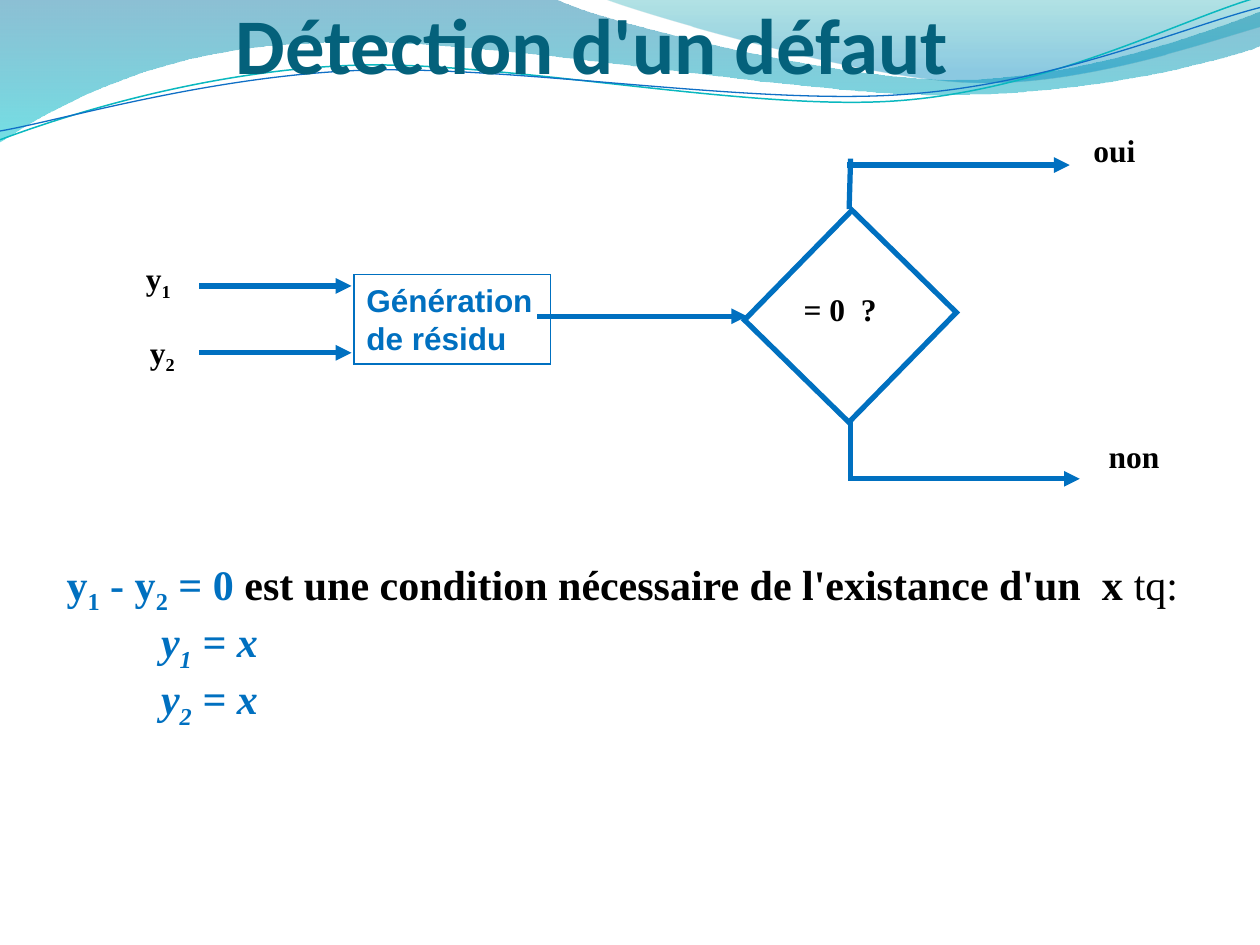
import pptx
import pptx.dml.color
import pptx.enum.shapes
import pptx.enum.text
import pptx.oxml.ns
import pptx.util
from dataclasses import dataclass
from lxml import etree

Inches = pptx.util.Inches
Pt = pptx.util.Pt
qn = pptx.oxml.ns.qn
Anchor = pptx.enum.text.MSO_ANCHOR
Align = pptx.enum.text.PP_ALIGN
AutoSize = pptx.enum.text.MSO_AUTO_SIZE
Shape = pptx.enum.shapes.MSO_SHAPE


@dataclass(frozen=True)
class Theme:
    """Colours, fonts, type sizes and line widths of the slide."""
    blue: str = "0070C0"
    black: str = "000000"
    title: str = "04617B"
    serif: str = "Times New Roman"
    sans: str = "Arial"
    heading: str = "Calibri"
    title_size: int = 45
    body_size: int = 24
    label_size: int = 18
    flow_width: float = 3
    box_width: float = 0.75


T = Theme()
LABEL = {"name": T.serif, "size": Pt(T.label_size), "bold": True, "color": T.black}
BOX = {**LABEL, "name": T.sans, "color": T.blue}
BODY = {"name": T.serif, "size": Pt(T.body_size), "bold": True, "color": T.blue}
TITLE = {"name": T.heading, "size": Pt(T.title_size), "bold": True, "color": T.title}

BANDS = [
    ([(0, 0), (4.4, -0.01), (4.76, 0.17, 6.64, 0.63, 7.58, 0.63),
      (8.53, 0.63, 9.58, 0.26, 10, 0.09), (10.01, 0.36),
      (9.83, 0.44, 8.7, 0.76, 7.46, 0.75), (6.22, 0.75, 3.82, 0.28, 2.57, 0.34),
      (1.29, 0.36, 0.46, 0.83, -0.01, 1.13), (0, 0)],
     [(0, "0074A1", 45), (1, "00C6CF", 55)]),
    ([(4.79, -0.01), (5.09, 0.11, 6.82, 0.62, 7.69, 0.65),
      (8.56, 0.69, 9.61, 0.32, 10, 0.21), (10, 0), (4.79, -0.01)],
     [(0, "00A1A9", 30), (0.8, "008BBF", 45)]),
]
WAVES = [
    ([(0, 1.11), (0.48, 0.93, 1.58, 0.57, 2.77, 0.52), (3.95, 0.47, 5.93, 0.89, 7.13, 0.8),
      (8.33, 0.71, 9.38, 0.15, 9.98, -0.02)], "0AB8BF", 0.85),
    ([(0, 1.04), (0.47, 0.96, 1.64, 0.61, 2.83, 0.56), (4.03, 0.51, 5.97, 0.84, 7.17, 0.75),
      (8.36, 0.67, 9.41, 0.21, 10, 0.06)], "0F6FC6", 0.75),
]


def rgb(value):
    """Return a colour object for a hex string."""
    return pptx.dml.color.RGBColor.from_string(value)


def set_line(line, color, width):
    """Give a line its colour and width."""
    line.color.rgb = rgb(color)
    line.width = Pt(width)


def add_run(p, text, fmt):
    """Add a run formatted from a dict."""
    r = p.add_run()
    r.text = text
    for key, value in fmt.items():
        if key == "color":
            r.font.color.rgb = rgb(value)
        else:
            setattr(r.font, key, value)
    return r


def add_indexed(p, text, fmt):
    """Add text in which each underscore makes the next character a subscript."""
    head, *tails = text.split("_")
    add_run(p, head, fmt)
    for tail in tails:
        add_run(p, tail[0], fmt)._r.get_or_add_rPr().set("baseline", "-25000")
        if tail[1:]:
            add_run(p, tail[1:], fmt)


def add_path(s, segments, close):
    """Add a freeform of straight segments and cubic curves."""
    points = [(Inches(seg[i]), Inches(seg[i + 1]))
              for seg in segments for i in range(0, len(seg), 2)]
    builder = s.shapes.build_freeform(*points[0])
    builder.add_line_segments(points[1:], close=close)
    sp = builder.convert_to_shape()
    sp.shadow.inherit = False
    nodes = iter(list(sp.element.iter(qn("a:lnTo"))))
    for seg in segments[1:]:
        first, *rest = [next(nodes) for _ in range(len(seg) // 2)]
        if rest:
            curve = etree.Element(qn("a:cubicBezTo"))
            first.addprevious(curve)
            for node in (first, *rest):
                curve.append(node[0])
                node.getparent().remove(node)
    return sp


def add_band(s, segments, stops):
    """Add a translucent band with a vertical gradient."""
    sp = add_path(s, segments, True)
    sp.line.fill.background()
    sp.fill.gradient()
    sp.fill.gradient_angle = 270
    for stop, (position, color, _) in zip(sp.fill.gradient_stops, stops):
        stop.position = position
        stop.color.rgb = rgb(color)
    for clr, (_, _, opacity) in zip(sp.element.spPr.iter(qn("a:srgbClr")), stops):
        etree.SubElement(clr, qn("a:alpha")).set("val", str(opacity * 1000))


def add_wave(s, segments, color, width):
    """Add a thin curved line."""
    sp = add_path(s, segments, False)
    sp.fill.background()
    set_line(sp.line, color, width)


def add_title(s, text):
    """Place and format the title in front of the decoration."""
    sp = s.shapes.title
    sp.left, sp.top, sp.width, sp.height = map(Inches, (1.87, 0.12, 5.94, 0.6))
    tf = sp.text_frame
    values = {"margin_left": 0, "margin_top": Inches(0.05), "margin_right": 0,
              "margin_bottom": 0, "vertical_anchor": Anchor.BOTTOM,
              "auto_size": AutoSize.NONE}
    for key, value in values.items():
        setattr(tf, key, value)
    p = tf.paragraphs[0]
    p.alignment = Align.LEFT
    add_run(p, text, TITLE)
    sp.element.getparent().append(sp.element)


def add_label(s, text, x, y, w):
    """Add a one-line label."""
    tf = s.shapes.add_textbox(Inches(x), Inches(y), Inches(w), Inches(0.4)).text_frame
    tf.word_wrap = False
    tf.auto_size = AutoSize.SHAPE_TO_FIT_TEXT
    add_indexed(tf.paragraphs[0], text, LABEL)


def add_box(s, x, y, w, h, width, text="", rotation=0):
    """Add an unfilled, sharp-cornered rectangle with optional text."""
    sp = s.shapes.add_shape(Shape.RECTANGLE, Inches(x), Inches(y), Inches(w), Inches(h))
    sp.shadow.inherit = False
    sp.rotation = rotation
    sp.fill.background()
    set_line(sp.line, T.blue, width)
    etree.SubElement(sp.element.spPr.find(qn("a:ln")), qn("a:miter")).set("lim", "800000")
    if text:
        sp.text_frame.vertical_anchor = Anchor.TOP
        p = sp.text_frame.paragraphs[0]
        p.alignment = Align.LEFT
        add_run(p, text, BOX)


def add_flow(s, x1, y1, x2, y2, arrow=True):
    """Add a square-capped flow line, with an arrowhead at its end if asked."""
    kind = pptx.enum.shapes.MSO_CONNECTOR.STRAIGHT
    c = s.shapes.add_connector(kind, Inches(x1), Inches(y1), Inches(x2), Inches(y2))
    set_line(c.line, T.blue, T.flow_width)
    ln = c.element.spPr.find(qn("a:ln"))
    ln.set("cap", "sq")
    if arrow:
        etree.SubElement(ln, qn("a:tailEnd")).set("type", "triangle")
    etree.SubElement(c.element.spPr, qn("a:effectLst"))


def add_condition(s):
    """Add the condition and its two equations."""
    tf = s.shapes.add_textbox(Inches(0.35), Inches(3.84), Inches(9.65), Inches(2.26)).text_frame
    tf.word_wrap = True
    tf.margin_top = Inches(0.59)
    p = tf.paragraphs[0]
    p._p.get_or_add_pPr().set("marL", str(Inches(0.08)))
    add_indexed(p, "y_1 - y_2 = 0 ", BODY)
    black = {**BODY, "color": T.black}
    add_run(p, "est une condition nécessaire de l'existance d'un  x ", black)
    add_run(p, "tq:", {**black, "bold": False})
    for text in ("y_1 = x", "y_2 = x"):
        p = tf.add_paragraph()
        p._p.get_or_add_pPr().set("marL", str(Inches(0.83)))
        add_indexed(p, text, {**BODY, "italic": True})


def main():
    """Build the slide and save it."""
    prs = pptx.Presentation()
    prs.slide_width, prs.slide_height = Inches(10), Inches(7.5)
    s = prs.slides.add_slide(prs.slide_layouts[5])
    for band in BANDS:
        add_band(s, *band)
    for wave in WAVES:
        add_wave(s, *wave)
    add_condition(s)
    add_title(s, "Détection d'un défaut")
    add_box(s, 6.17, 1.9, 1.16, 1.22, T.flow_width, rotation=44.4)
    add_box(s, 2.81, 2.18, 1.56, 0.71, T.box_width, "Génération de résidu")
    for flow in [(6.74, 1.64, 6.75, 1.28, False), (6.75, 3.36, 6.75, 3.8, False),
                 (6.74, 1.31, 8.49, 1.31), (6.75, 3.8, 8.57, 3.8), (4.28, 2.51, 5.93, 2.51),
                 (1.6, 2.27, 2.79, 2.27), (1.6, 2.8, 2.79, 2.8)]:
        add_flow(s, *flow)
    for label in [("y_1", 1.06, 2.01, 0.41), ("y_2", 1.09, 2.59, 0.41), ("= 0  ?", 6.28, 2.25, 0.79),
                  ("oui", 8.58, 0.99, 0.54), ("non", 8.7, 3.42, 0.61)]:
        add_label(s, *label)
    prs.save("out.pptx")


if __name__ == "__main__":
    main()
